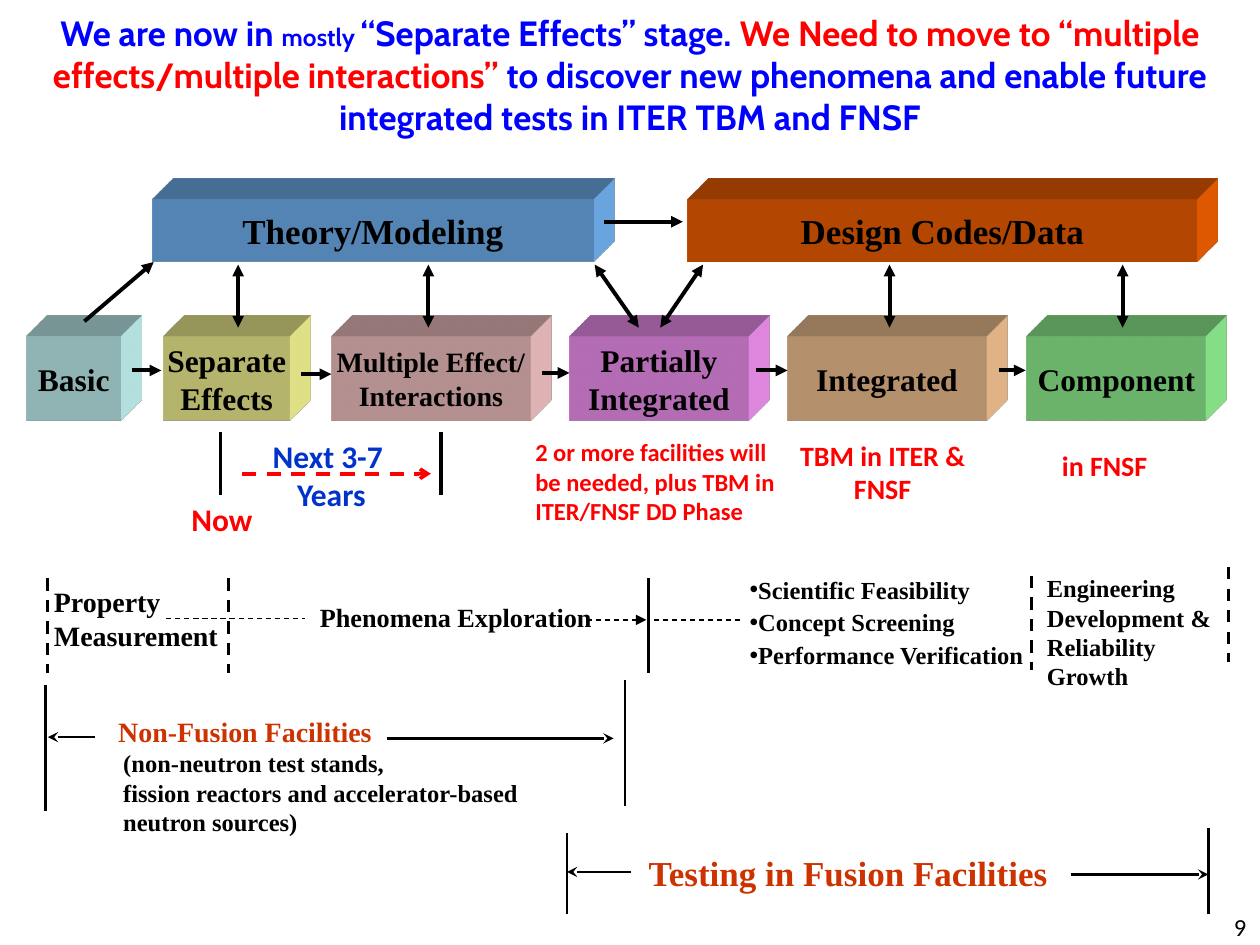
"""Build the slide on moving from separate effects to integrated fusion tests."""
from lxml import etree
from pptx import Presentation
from pptx import util as u
from pptx.dml.color import RGBColor
from pptx.enum import dml, shapes, text
from pptx.oxml import parse_xml
from pptx.oxml.ns import nsdecls, qn

BLACK = RGBColor(0x00, 0x00, 0x00)
RED = RGBColor(0xFF, 0x00, 0x00)
BLUE = RGBColor(0x00, 0x00, 0xFF)
NAVY = RGBColor(0x00, 0x33, 0xCC)
RUST = RGBColor(0xCC, 0x33, 0x00)
SKY = RGBColor(0x79, 0xBC, 0xFF)
ORANGE = RGBColor(0xFF, 0x66, 0x00)
AQUA = RGBColor(0xCC, 0xFF, 0xFF)
YELLOW = RGBColor(0xFF, 0xFF, 0x99)
PINK = RGBColor(0xFF, 0xCC, 0xCC)
VIOLET = RGBColor(0xFF, 0x99, 0xFF)
PEACH = RGBColor(0xFF, 0xCC, 0x99)
GREEN = RGBColor(0x99, 0xFF, 0x99)
SERIF, SANS, HEAD = "Times New Roman", "Calibri", "Cabin"
LEFT, CENTER, RIGHT = text.PP_ALIGN.LEFT, text.PP_ALIGN.CENTER, text.PP_ALIGN.RIGHT

prs = Presentation()
prs.slide_width, prs.slide_height = u.Inches(10), u.Inches(7.5)
COL, ROW = prs.slide_width / 100, prs.slide_height / 75
s = prs.slides.add_slide(prs.slide_layouts[1])


def write(tf, words, size, color, name=SERIF, align=LEFT, bold=True):
    tf.text = words
    for p in tf.paragraphs:
        p.alignment = align
        for r in p.runs:
            for key, value in dict(size=u.Pt(size), name=name, bold=bold).items():
                setattr(r.font, key, value)
            r.font.color.rgb = color


def connect(x1, y1, x2, y2, width, color=BLACK, dash=False, head=None, tail=None):
    c = s.shapes.add_connector(shapes.MSO_CONNECTOR.STRAIGHT, *map(
        int, (x1 * COL, y1 * ROW, x2 * COL, y2 * ROW)))
    c.line.width, c.line.color.rgb = u.Pt(width), color
    if dash:
        c.line.dash_style = dml.MSO_LINE.DASH
    for tag, kind in (("a:headEnd", head), ("a:tailEnd", tail)):
        if kind:
            etree.SubElement(c.line._get_or_add_ln(), qn(tag), type=kind)
    etree.SubElement(c._element.spPr, qn("a:effectLst"))


title, body = s.placeholders
for sp, x, y, w, h in ((title, 0, 0.4, 100, 11.1), (body, 58.5, 45.1, 28, 8.4)):
    frame = dict(left=x * COL, top=y * ROW, width=w * COL, height=h * ROW)
    for key, value in frame.items():
        setattr(sp, key, int(value))
    tf = sp.text_frame
    for key, value in dict(word_wrap=True, auto_size=text.MSO_AUTO_SIZE.NONE,
                           vertical_anchor=text.MSO_ANCHOR.TOP).items():
        setattr(tf, key, value)

p = title.text_frame.paragraphs[0]
p.alignment = CENTER
for words, size, color in (
    ("We are now in ", 20, BLUE),
    ("mostly ", 14, BLUE),
    ("“Separate Effects” stage. ", 20, BLUE),
    ("We Need to move to “multiple effects/multiple interactions” ", 20, RED),
    ("to discover new phenomena and enable future integrated tests in ITER TBM and FNSF",
     20, BLUE),
):
    r = p.add_run()
    r.text = words
    for key, value in dict(size=u.Pt(size), name=HEAD, bold=True).items():
        setattr(r.font, key, value)
    r.font.color.rgb = color

write(body.text_frame,
      "Scientific Feasibility\nConcept Screening\nPerformance Verification", 14, BLACK)
for p in body.text_frame.paragraphs:
    p.space_before, p.space_after = u.Pt(0), u.Pt(2)
    for key in ("marL", "indent"):
        p._p.get_or_add_pPr().set(key, "0")

THEORY, STAGE = (15.8, 5), (26.7, 6.7)
for words, x, w, (y, h), size, color in (
    ("Theory/Modeling", 12.1, 35, THEORY, 20, SKY),
    ("Design Codes/Data", 54.6, 40.4, THEORY, 20, ORANGE),
    ("Basic", 2.1, 7.5, STAGE, 18, AQUA),
    ("Separate\nEffects", 13, 10, STAGE, 18, YELLOW),
    ("Multiple Effect/\nInteractions", 26.3, 15.8, STAGE, 16, PINK),
    ("Partially\nIntegrated", 45.2, 14.2, STAGE, 18, VIOLET),
    ("Integrated", 62.5, 15.8, STAGE, 18, PEACH),
    ("Component", 81.5, 14.2, STAGE, 18, GREEN),
):
    sp = s.shapes.add_shape(shapes.MSO_SHAPE.RECTANGLE, *map(
        int, (x * COL, y * ROW, w * COL, h * ROW)))
    sp.shadow.inherit = False
    sp.fill.solid()
    sp.fill.fore_color.rgb = color
    sp.line.fill.background()
    sp.text_frame.word_wrap = False
    sp.text_frame.vertical_anchor = text.MSO_ANCHOR.MIDDLE
    write(sp.text_frame, words, size, BLACK, align=CENTER)
    for xml in (
        '<a:scene3d %s><a:camera prst="legacyObliqueTopRight"/>'
        '<a:lightRig rig="legacyFlat3" dir="b"/></a:scene3d>' % nsdecls("a"),
        '<a:sp3d %s extrusionH="430200" prstMaterial="legacyMatte"><a:extrusionClr>'
        '<a:srgbClr val="%s"/></a:extrusionClr></a:sp3d>' % (nsdecls("a"), color),
    ):
        sp._element.spPr.append(parse_xml(xml))

for x1, y1, x2, y2 in (
    (6.7, 25.5, 12.2, 20.8), (47.9, 17.6, 54.2, 17.6), (10.5, 29.4, 12.8, 29.4),
    (23.9, 29.7, 26.3, 29.7), (43, 29.6, 45.2, 29.6), (60, 29.4, 62.5, 29.4),
    (79.3, 29.4, 81.4, 29.4),
):
    connect(x1, y1, x2, y2, 2.25, tail="triangle")
for x1, x2 in ((18.9, 18.9), (34, 34), (50.7, 47.2), (52.4, 55.8), (70.6, 70.6), (89.1, 89.1)):
    connect(x1, 26, x2, 21, 2.25, head="triangle", tail="triangle")

connect(19.2, 37.6, 34.2, 37.6, 2, RED, dash=True, tail="arrow")
for x in (17.5, 35):
    connect(x, 34.3, x, 39.3, 2)
for x, y, dash in ((3.8, 45.9, True), (18.1, 45.9, True), (51.5, 45.9, False),
                   (81.9, 45.7, True), (97.5, 45, True)):
    connect(x, y, x, y + 7.5, 1.75, dash=dash)
for x1, x2, y, tail in ((13.2, 24.2, 49.1, None), (46.6, 51.3, 49.2, "triangle"),
                        (51.9, 58.8, 49.2, None)):
    connect(x1, y, x2, y, 0.75, dash=True, tail=tail)
for x, y1, y2 in ((3.6, 54.4, 64.4), (49.6, 54, 64), (45, 66.1, 72.5), (95.9, 65.7, 72.5)):
    connect(x, y1, x, y2, 1.5)
for x1, x2, y in ((7.5, 3.8, 58.5), (30.7, 48.7, 58.6), (50.1, 45, 69.2), (85, 95.9, 69.4)):
    connect(x1, y, x2, y, 1.5, tail="stealth")

for words, x, y, w, h, size, color, name, align in (
    ("Next 3-7 \nYears", 19.2, 34.2, 14.2, 7.1, 18, NAVY, SANS, CENTER),
    ("Now", 14.2, 39.2, 8.3, 4, 18, RED, SANS, LEFT),
    ("2 or more facilities will be needed, plus TBM in ITER/FNSF DD Phase",
     41.5, 34.2, 21.3, 8.1, 14, RED, SANS, LEFT),
    ("TBM in ITER & FNSF", 61.7, 34.3, 16.7, 6.4, 16, RED, SANS, CENTER),
    ("in FNSF", 83.3, 35.1, 10.8, 3.7, 16, RED, SANS, LEFT),
    ("Property Measurement", 3.3, 45.9, 19.2, 6.4, 16, BLACK, SERIF, LEFT),
    ("Phenomena Exploration", 24.4, 47.2, 24.2, 3.5, 15, BLACK, SERIF, LEFT),
    ("Engineering Development & Reliability Growth",
     82.1, 45, 15.2, 10.4, 14, BLACK, SERIF, LEFT),
    ("Non-Fusion Facilities", 8.4, 56.2, 23.3, 3.7, 16, RUST, SERIF, LEFT),
    ("(non-neutron test stands, \vfission reactors and accelerator-based neutron sources)",
     8.8, 58.9, 38.7, 8.1, 14, BLACK, SERIF, LEFT),
    ("Testing in Fusion Facilities", 50.5, 67.1, 36.1, 4.3, 20, RUST, SERIF, LEFT),
    ("9", 95.7, 71.9, 4.2, 3.4, 14, BLACK, SANS, RIGHT),
):
    sp = s.shapes.add_textbox(*map(int, (x * COL, y * ROW, w * COL, h * ROW)))
    sp.text_frame.word_wrap = True
    write(sp.text_frame, words, size, color, name, align, bold=words != "9")

prs.save("out.pptx")
